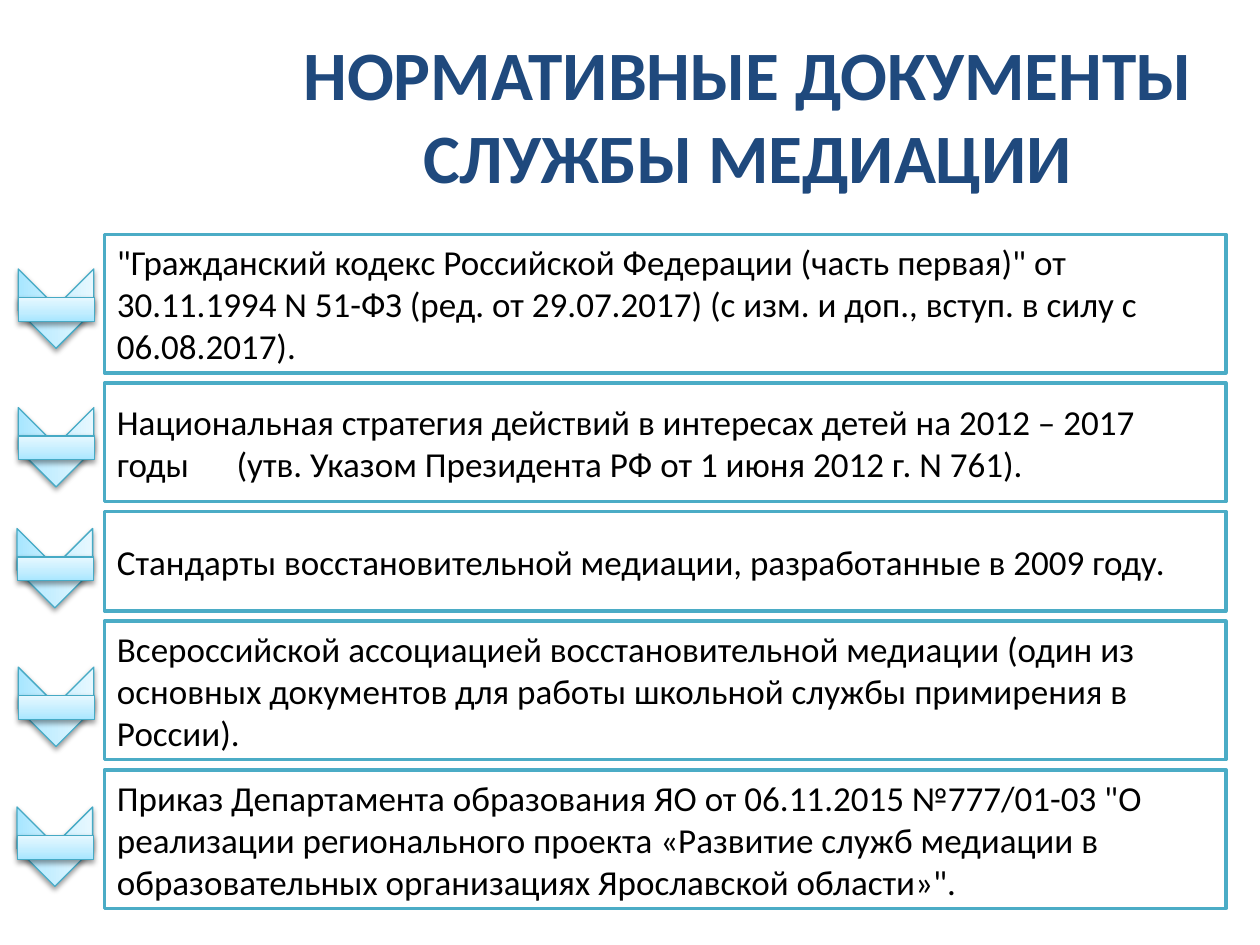
from copy import deepcopy

from lxml import etree
from pptx import Presentation
from pptx.dml.color import RGBColor
from pptx.enum.shapes import MSO_SHAPE
from pptx.enum.text import MSO_ANCHOR, PP_ALIGN
from pptx.oxml.ns import qn
from pptx.util import Inches, Pt

RECT, CHEVRON = MSO_SHAPE.RECTANGLE, MSO_SHAPE.CHEVRON
MIDDLE = MSO_ANCHOR.MIDDLE
LEFT, CENTER = PP_ALIGN.LEFT, PP_ALIGN.CENTER

COLS, ROWS = 100, 75
BOX_LEFT, BOX_WIDTH, BOX_TOP, BOX_GAP = 8.3, 89, 18.6, 0.8
TITLE = "НОРМАТИВНЫЕ ДОКУМЕНТЫ СЛУЖБЫ МЕДИАЦИИ"
DOCUMENTS = [
    (11, 1.3, 21.5, "\"Гражданский кодекс Российской Федерации (часть первая)\" от "
     "30.11.1994 N 51-ФЗ (ред. от 29.07.2017) (с изм. и доп., вступ. в силу с 06.08.2017)."),
    (9.4, 1.3, 32.5, "Национальная стратегия действий в интересах детей на 2012 – 2017 "
     "годы\t(утв. Указом Президента РФ от 1 июня 2012 г. N 761)."),
    (7.9, 1.2, 42.1, "Стандарты восстановительной медиации, разработанные в 2009 году."),
    (11, 1.3, 53.1, "Всероссийской ассоциацией восстановительной медиации (один из "
     "основных документов для работы школьной службы примирения в России)."),
    (11, 1.2, 64.2, "Приказ Департамента образования ЯО от 06.11.2015 №777/01-03 \"О "
     "реализации регионального проекта «Развитие служб медиации в образовательных "
     "организациях Ярославской области»\"."),
]


def rgb(value):
    return RGBColor.from_string(value)


class Deck:
    """Style and current slide, with one method per kind of element."""

    font = "Calibri"
    navy, teal, edge, black, white = "1F497D", "4BACC6", "46AAC5", "000000", "FFFFFF"
    gradient = [(0, "A7E6FF"), (0.35, "C1EDFF"), (1, "E7F8FF")]

    def __init__(self):
        self.prs = Presentation()
        self.prs.slide_width, self.prs.slide_height = Inches(10), Inches(7.5)
        self.slide = self.prs.slides.add_slide(self.prs.slide_layouts[5])

    def area(self, col, row, cols, rows):
        x, y = self.prs.slide_width / COLS, self.prs.slide_height / ROWS
        return [round(v) for v in (col * x, row * y, cols * x, rows * y)]

    def add_text(self, s, text, size, color, align, bold=False):
        tf = s.text_frame
        tf.word_wrap, tf.vertical_anchor = True, MIDDLE
        p = tf.paragraphs[0]
        p.alignment = align
        if "\t" in text:
            tabs = etree.SubElement(p._p.get_or_add_pPr(), qn("a:tabLst"))
            etree.SubElement(tabs, qn("a:tab"), pos=str(Inches(0.95)), algn="l")
        for i, part in enumerate(text.split("\t")):
            r = p.add_run()
            r.text = "\t" * bool(i) + part
            r.font.name, r.font.size, r.font.bold = self.font, Pt(size), bold
            r.font.color.rgb = rgb(color)

    def title(self, text, *cells):
        s = self.slide.shapes.title
        s.left, s.top, s.width, s.height = self.area(*cells)
        self.add_text(s, text, 39.6, self.navy, CENTER, True)

    def shape(self, shapes, kind, cells, line, width):
        s = shapes.add_shape(kind, *self.area(*cells))
        s.shadow.inherit = False
        s.line.color.rgb, s.line.width = rgb(line), Pt(width)
        return s

    def box(self, text, *cells):
        s = self.shape(self.slide.shapes, RECT, cells, self.teal, 2)
        s.fill.solid()
        s.fill.fore_color.rgb = rgb(self.white)
        self.add_text(s, text, 20, self.black, LEFT)

    def glossy(self, shapes, kind, *cells):
        s = self.shape(shapes, kind, cells, self.edge, 0.75)
        s.fill.gradient()
        s.fill.gradient_angle = 90
        stops = s._element.spPr.find(qn("a:gradFill")).find(qn("a:gsLst"))
        stops.insert(1, deepcopy(stops[0]))
        for stop, (position, color) in zip(s.fill.gradient_stops, self.gradient):
            stop.position, stop.color.rgb = position, rgb(color)
        effects = s._element.spPr.find(qn("a:effectLst"))
        shadow = etree.SubElement(effects, qn("a:outerShdw"), blurRad=str(Pt(3.1)),
                                  dist=str(Pt(1.6)), dir="5400000", rotWithShape="0")
        color = etree.SubElement(shadow, qn("a:srgbClr"), val=self.black)
        etree.SubElement(color, qn("a:alpha"), val="38000")
        return s

    def marker(self, col, row):
        group = self.slide.shapes.add_group_shape()
        self.glossy(group.shapes, CHEVRON, col, row, 6.3, 6).rotation = 90
        self.glossy(group.shapes, RECT, col + 0.2, row + 2.1, 6, 1.9)


def main():
    deck = Deck()
    deck.title(TITLE, 22.7, 1.6, 73.3, 14.9)
    top = BOX_TOP
    for height, col, row, text in DOCUMENTS:
        deck.box(text, BOX_LEFT, top, BOX_WIDTH, height)
        deck.marker(col, row)
        top += height + BOX_GAP
    deck.prs.save("out.pptx")


if __name__ == "__main__":
    main()
